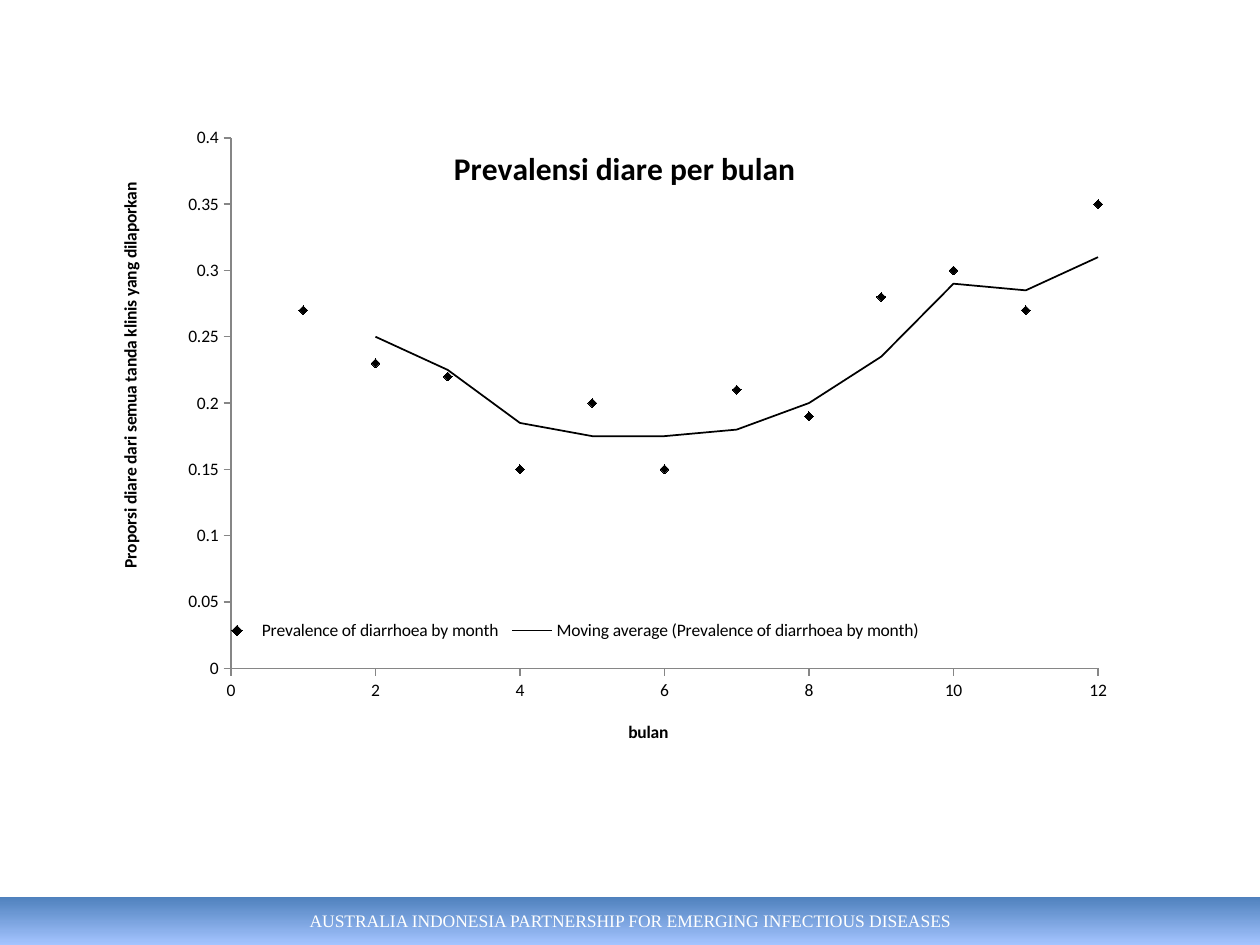
import pptx
import pptx.chart.data
import pptx.dml.color
import pptx.enum.chart
import pptx.enum.shapes
import pptx.enum.text
import pptx.oxml
import pptx.oxml.ns
import pptx.util
from dataclasses import dataclass

Cm = pptx.util.Cm
Pt = pptx.util.Pt
CHART_NAMESPACE = pptx.oxml.ns.nsdecls("c", "a")


@dataclass(frozen=True)
class Theme:
    ink: str = "000000"
    axis: str = "868686"
    footer_top: str = "4F81BD"
    footer_bottom: str = "A4C4FF"
    footer_text: str = "FFFFFF"
    chart_font: str = "Calibri"
    footer_font: str = "Times New Roman"
    title_size: int = 18
    body_size: int = 10


THEME = Theme()
PREVALENCE = [0.27, 0.23, 0.22, 0.15, 0.2, 0.15,
              0.21, 0.19, 0.28, 0.3, 0.27, 0.35]


def rgb(value):
    return pptx.dml.color.RGBColor.from_string(value)


def set_font(font, name, size, color, bold=False):
    font.name = name
    font.size = Pt(size)
    font.bold = bold
    font.color.rgb = rgb(color)


def place(element, x, y, width=None, height=None, inner=False):
    """Give a chart part a manual layout in fractions of the chart."""
    for old_layout in element.xpath("./c:layout"):
        element.remove(old_layout)
    parts = '<c:layoutTarget val="inner"/>' if inner else ""
    parts += '<c:xMode val="edge"/><c:yMode val="edge"/>'
    for tag, value in zip("xywh", (x, y, width, height)):
        if value is not None:
            parts += f'<c:{tag} val="{value}"/>'
    layout = pptx.oxml.parse_xml(
        f"<c:layout {CHART_NAMESPACE}><c:manualLayout>{parts}"
        "</c:manualLayout></c:layout>")
    overlay = element.xpath("./c:overlay")
    if overlay:
        overlay[0].addprevious(layout)
    else:
        element.insert(0, layout)


def write_title(title, text, size, x, y):
    paragraph = title.text_frame.paragraphs[0]
    paragraph.text = text
    set_font(paragraph.font, THEME.chart_font, size, THEME.ink, bold=True)
    place(title.element, x, y)


def style_axis(axis, maximum, step, title, x, y):
    axis.minimum_scale, axis.maximum_scale = 0, maximum
    axis.major_unit = step
    axis.has_major_gridlines = False
    axis.major_tick_mark = pptx.enum.chart.XL_TICK_MARK.OUTSIDE
    axis.minor_tick_mark = pptx.enum.chart.XL_TICK_MARK.NONE
    axis.tick_labels.number_format = "General"
    axis.tick_labels.number_format_is_linked = False
    axis.format.line.color.rgb = rgb(THEME.axis)
    axis.format.line.width = Pt(0.75)
    write_title(axis.axis_title, title, THEME.body_size, x, y)


def add_moving_average(chart, period):
    trend = pptx.oxml.parse_xml(
        f'<c:trendline {CHART_NAMESPACE}><c:spPr><a:ln w="{Pt(1)}"><a:solidFill>'
        f'<a:srgbClr val="{THEME.ink}"/></a:solidFill></a:ln></c:spPr>'
        f'<c:trendlineType val="movingAvg"/><c:period val="{period}"/>'
        '<c:dispRSqr val="0"/><c:dispEq val="0"/></c:trendline>')
    chart.element.xpath(".//c:ser/c:xVal")[0].addprevious(trend)


def add_prevalence_chart(slide):
    data = pptx.chart.data.XyChartData()
    points = data.add_series("Prevalence of diarrhoea by month")
    for month, value in enumerate(PREVALENCE, start=1):
        points.add_data_point(month, value)
    chart = slide.shapes.add_chart(
        pptx.enum.chart.XL_CHART_TYPE.XY_SCATTER,
        Cm(2.12), Cm(2.33), Cm(20.96), Cm(12.9), data).chart
    set_font(chart.font, THEME.chart_font, THEME.body_size, THEME.ink)
    chart.plots[0].vary_by_categories = False

    # Monthly points
    series = chart.plots[0].series[0]
    series.format.line.fill.background()
    marker = series.marker
    marker.style = pptx.enum.chart.XL_MARKER_STYLE.DIAMOND
    marker.size = 5
    marker.format.fill.solid()
    marker.format.fill.fore_color.rgb = rgb(THEME.ink)
    marker.format.line.color.rgb = rgb(THEME.ink)
    add_moving_average(chart, period=2)

    # Title, axes and plot area
    chart.has_title = True
    write_title(chart.chart_title, "Prevalensi diare per bulan",
                THEME.title_size, 0.33, 0.04)
    style_axis(chart.category_axis, 12, 2, "bulan", 0.5, 0.94)
    style_axis(chart.value_axis, 0.4, 0.05,
               "Proporsi diare dari semua tanda klinis yang dilaporkan",
               0.01, 0.1)
    place(chart.element.xpath(".//c:plotArea")[0],
          0.121, 0.035, 0.834, 0.829, inner=True)

    # Legend
    chart.has_legend = True
    chart.legend.position = pptx.enum.chart.XL_LEGEND_POSITION.RIGHT
    chart.legend.include_in_layout = False
    place(chart.element.xpath(".//c:legend")[0], 0.1, 0.78, 0.69, 0.05)


def add_footer(slide, text):
    shape = slide.shapes.add_shape(
        pptx.enum.shapes.MSO_SHAPE.RECTANGLE,
        0, Cm(18.08), Cm(25.4), Cm(0.97))
    shape.shadow.inherit = False
    shape.line.fill.background()
    shape.fill.gradient()
    shape.fill.gradient_angle = 270
    colors = (THEME.footer_top, THEME.footer_bottom)
    for position, (stop, color) in enumerate(zip(shape.fill.gradient_stops, colors)):
        stop.position = position
        stop.color.rgb = rgb(color)
    shape.text_frame.vertical_anchor = pptx.enum.text.MSO_ANCHOR.MIDDLE
    paragraph = shape.text_frame.paragraphs[0]
    paragraph.text = text
    paragraph.alignment = pptx.enum.text.PP_ALIGN.CENTER
    set_font(paragraph.font, THEME.footer_font, THEME.body_size, THEME.footer_text)


def main():
    presentation = pptx.Presentation()
    presentation.slide_width = Cm(25.4)
    presentation.slide_height = Cm(19.05)
    slide = presentation.slides.add_slide(presentation.slide_layouts[6])
    add_footer(slide, "AUSTRALIA INDONESIA PARTNERSHIP FOR EMERGING INFECTIOUS DISEASES")
    add_prevalence_chart(slide)
    presentation.save("out.pptx")


if __name__ == "__main__":
    main()
